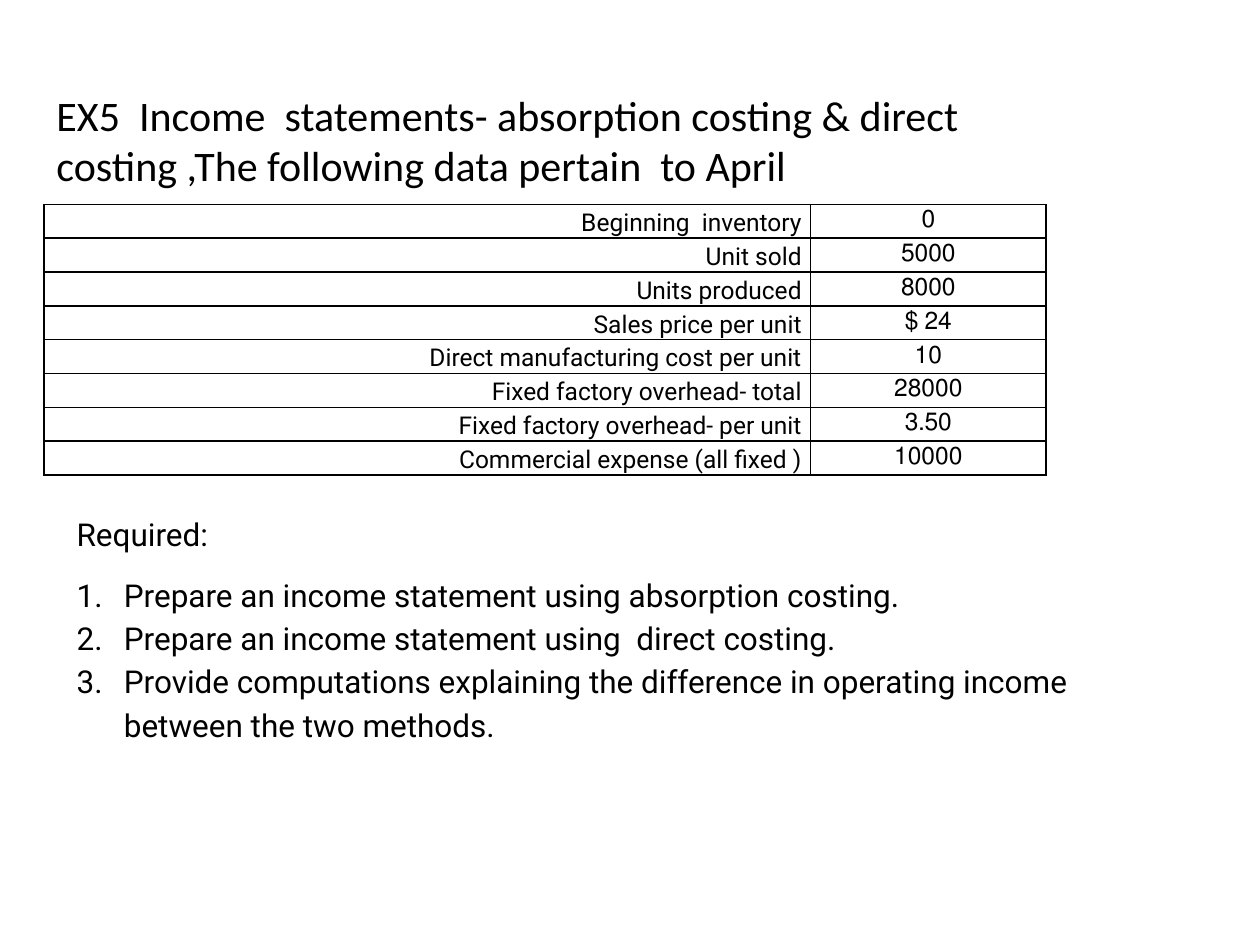
from dataclasses import dataclass

from lxml.etree import SubElement
from pptx import Presentation
from pptx.dml.color import RGBColor
from pptx.enum.text import MSO_ANCHOR as Anchor, PP_ALIGN as Align
from pptx.oxml.ns import qn
from pptx.util import Pt


@dataclass(frozen=True)
class Theme:
    ink: str = "000000"
    paper: str = "FFFFFF"
    title_font: str = "Calibri"
    body_font: str = "Roboto"
    title_size: int = 24
    body_size: int = 18
    cell_size: int = 14
    line_spacing: float = 1.15
    space_after: int = 10
    border: int = 1
    list_indent: int = 27


class SlideBuilder:
    def __init__(self, page, theme):
        self.page = page
        self.theme = theme

    def add_span(self, para, text, font, size):
        span = para.add_run()
        span.text = text
        span.font.name = font
        span.font.size = Pt(size)
        span.font.color.rgb = RGBColor.from_string(self.theme.ink)

    def right_to_left(self, para, align):
        para.alignment = align
        para._p.get_or_add_pPr().set("rtl", "1")

    def number(self, para):
        """Make the paragraph an item of a 1. 2. 3. list."""
        indent = Pt(self.theme.list_indent)
        props = para._p.get_or_add_pPr()
        props.set("marL", str(indent))
        props.set("indent", str(-indent))
        SubElement(props, qn("a:buFont"), typeface="+mj-lt")
        SubElement(props, qn("a:buAutoNum"), type="arabicPeriod")

    def text_box(self, left, top, width, height):
        box = self.page.shapes.add_textbox(Pt(left), Pt(top), Pt(width), Pt(height))
        box.text_frame.word_wrap = True
        return box.text_frame

    def title(self, text, *place):
        frame = self.text_box(*place)
        frame.vertical_anchor = Anchor.MIDDLE
        frame.margin_right = Pt(20)
        para = frame.paragraphs[0]
        self.right_to_left(para, Align.LEFT)
        self.add_span(para, text, self.theme.title_font, self.theme.title_size)

    def requirements(self, heading, items, *place):
        frame = self.text_box(*place)
        for index, text in enumerate([heading, *items]):
            para = frame.add_paragraph() if index else frame.paragraphs[0]
            if index:
                self.number(para)
            para.line_spacing = self.theme.line_spacing
            if index in (0, len(items)):
                para.space_after = Pt(self.theme.space_after)
            self.add_span(para, text, self.theme.body_font, self.theme.body_size)

    def outline(self, cell):
        props = cell._tc.get_or_add_tcPr()
        for side in ("lnL", "lnR", "lnT", "lnB"):
            line = SubElement(props, qn(f"a:{side}"), w=str(Pt(self.theme.border)))
            fill = SubElement(line, qn("a:solidFill"))
            SubElement(fill, qn("a:srgbClr"), val=self.theme.ink)

    def table(self, rows, left, top, widths, row_height):
        grid = self.page.shapes.add_table(
            len(rows), len(widths), Pt(left), Pt(top),
            Pt(sum(widths)), Pt(row_height * len(rows))).table
        grid.first_row = grid.horz_banding = False
        for column, width in zip(grid.columns, widths):
            column.width = Pt(width)
        for row_index, row in enumerate(rows):
            for column_index, text in enumerate(row):
                cell = grid.cell(row_index, column_index)
                align = Align.CENTER if column_index else Align.RIGHT
                self.fill_cell(cell, text, align)

    def fill_cell(self, cell, text, align):
        cell.margin_left = cell.margin_right = Pt(5)
        cell.margin_top = cell.margin_bottom = 0
        self.outline(cell)
        cell.fill.solid()
        cell.fill.fore_color.rgb = RGBColor.from_string(self.theme.paper)
        para = cell.text_frame.paragraphs[0]
        self.right_to_left(para, align)
        para.line_spacing = self.theme.line_spacing
        para.space_after = Pt(self.theme.space_after)
        self.add_span(para, text, self.theme.body_font, self.theme.cell_size)


APRIL_DATA = [
    ("Beginning  inventory", "0"),
    ("Unit sold", "5000"),
    ("Units produced", "8000"),
    ("Sales price per unit", "24 $"),
    ("Direct manufacturing cost per unit ", "10"),
    ("Fixed factory overhead- total", "28000"),
    ("Fixed factory overhead- per unit", "3.50"),
    ("Commercial expense (all fixed )", "10000"),
]
TASKS = [
    "Prepare an income statement using absorption costing.",
    "Prepare an income statement using  direct costing.",
    "Provide computations explaining the difference in operating income "
    "between the two methods.",
]


def main():
    deck = Presentation()
    deck.slide_width, deck.slide_height = Pt(720), Pt(540)
    page = deck.slides.add_slide(deck.slide_layouts[6])
    builder = SlideBuilder(page, Theme())
    builder.title(
        "EX5  Income  statements- absorption costing & direct costing "
        ",The following data pertain  to April", 25.2, 31.7, 612, 96.5)
    builder.table(APRIL_DATA, 25.2, 116.8, (438, 134.6), 19.05)
    builder.requirements("Required:", TASKS, 36.7, 287.3, 629.3, 142.6)
    deck.save("out.pptx")


if __name__ == "__main__":
    main()
